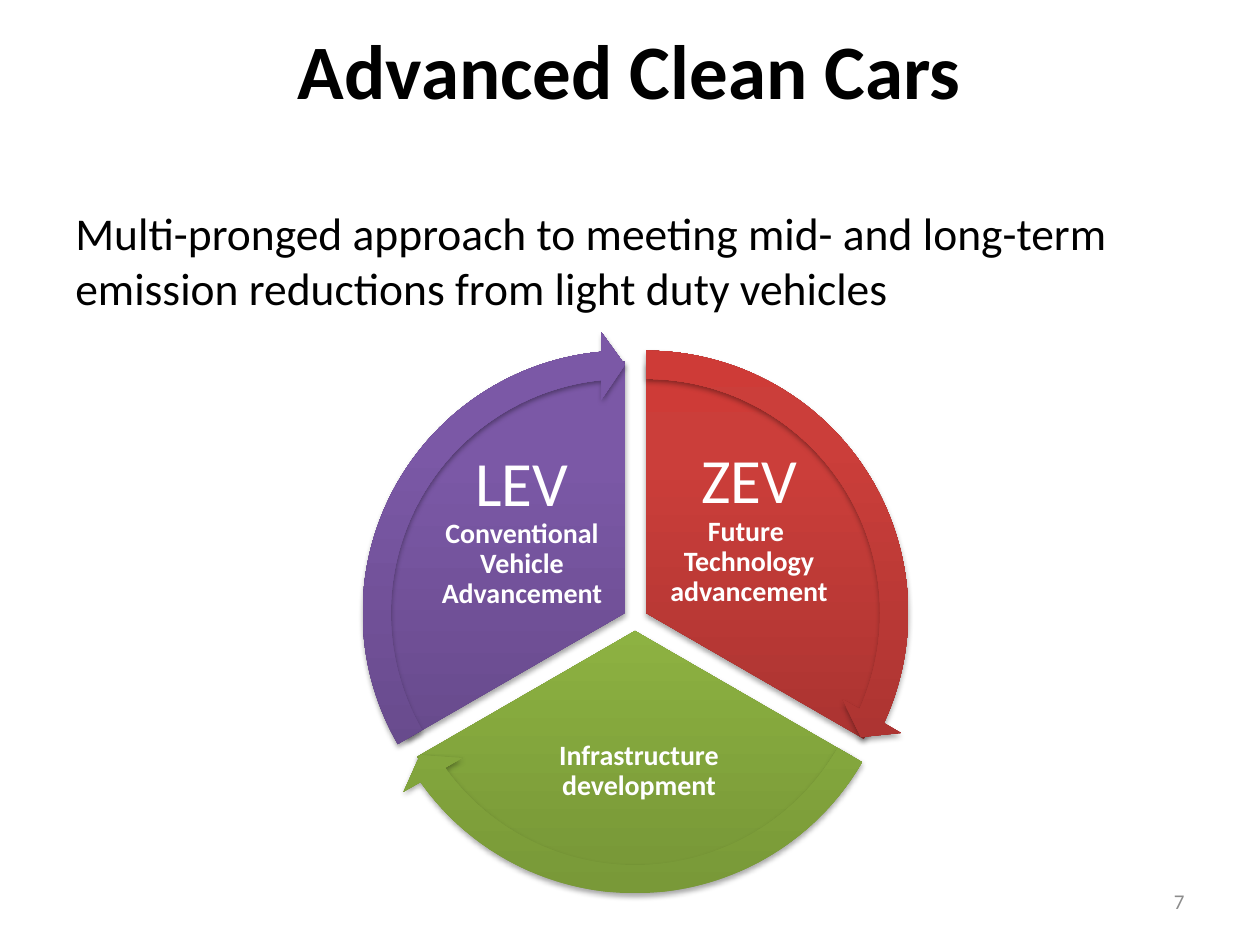
from copy import deepcopy

from lxml.etree import SubElement
from pptx import Presentation
from pptx.dml.color import RGBColor
from pptx.enum.shapes import MSO_SHAPE as Shape
from pptx.enum.text import MSO_ANCHOR as Anchor, PP_ALIGN as Align
from pptx.oxml.ns import qn
from pptx.util import Emu, Pt

PX = 914400 / 126
FONT = "Calibri"
BLACK = RGBColor(0x00, 0x00, 0x00)
WHITE = RGBColor(0xFF, 0xFF, 0xFF)
GRAY = RGBColor(0x8C, 0x8C, 0x8C)
RED = [RGBColor(0x9C, 0x2F, 0x2D), RGBColor(0xCB, 0x3E, 0x3A), RGBColor(0xCE, 0x3B, 0x37)]
GREEN = [RGBColor(0x77, 0x97, 0x37), RGBColor(0x9B, 0xC3, 0x48), RGBColor(0x9D, 0xC7, 0x46)]
PURPLE = [RGBColor(0x5F, 0x44, 0x80), RGBColor(0x7B, 0x58, 0xA6), RGBColor(0x7C, 0x57, 0xA8)]

PIE_SIZE = 503
ARROW_SIZE = 564
HEAD_ANGLE = 3.28
# Sector: colours, centre offset from the wheel centre, start and end angle
# (in units of 100000/60000 degree)
SECTORS = [
    (RED, 11, -9, 162, 18),
    (GREEN, 0, 9, 18, 90),
    (PURPLE, -10, -9, 90, 162),
]
# Label: box within the wheel, side inset, bottom inset, lines (text, size, bold, spacing)
LABELS = [
    ((316, 139, 180, 150), 6, 37,
     [("ZEV", 36, False, 0.9), ("Future ", 16, True, 0.9),
      ("Technology advancement", 16, True, 0.9)]),
    ((161, 376, 270, 131), 3, 3, [("Infrastructure development", 16, True, 0.9)]),
    ((89, 139, 180, 150), 6, 41,
     [("LEV", 36, False, 1.0), ("Conventional", 16, True, 0.9),
      ("Vehicle", 16, True, 0.9), ("Advancement", 16, True, 0.9)]),
]


def px(length):
    return Emu(round(length * PX))


def add_text(page, box, lines, color, align, anchor):
    frame = page.shapes.add_textbox(*map(px, box)).text_frame
    frame.word_wrap = True
    frame.vertical_anchor = anchor
    for index, (text, size, bold, spacing) in enumerate(lines):
        para = frame.add_paragraph() if index else frame.paragraphs[0]
        para.alignment = align
        para.line_spacing = spacing
        span = para.add_run()
        span.text = text
        span.font.name = FONT
        span.font.size = Pt(size)
        span.font.bold = bold
        span.font.color.rgb = color
    return frame


def paint(shape, colors):
    """Gradient rising from the bottom, no outline, soft shadow below."""
    shape.line.fill.background()
    shape.fill.gradient()
    shape.fill.gradient_angle = 90
    properties = shape._element.spPr
    stop_list = properties.find(".//" + qn("a:gsLst"))
    stop_list.append(deepcopy(stop_list[-1]))
    for stop, position, color in zip(shape.fill.gradient_stops, (0, 0.8, 1), colors):
        stop.position = position
        stop.color.rgb = color
    shape.shadow.inherit = False
    shadow = SubElement(properties.find(qn("a:effectLst")), qn("a:outerShdw"),
                        blurRad=str(Pt(3.1)), dist=str(Pt(1.8)), dir="5400000",
                        rotWithShape="0")
    shade = SubElement(shadow, qn("a:srgbClr"), val=str(BLACK))
    SubElement(shade, qn("a:alpha"), val="35000")


def add_round(page, kind, center_x, center_y, size, adjustments, colors):
    shape = page.shapes.add_shape(kind, px(center_x - size / 2), px(center_y - size / 2),
                                  px(size), px(size))
    for index, value in enumerate(adjustments):
        shape.adjustments[index] = value
    paint(shape, colors)


def add_heading(page, box):
    add_text(page, box, [("Advanced Clean Cars", 44, True, 1.0)], BLACK,
             Align.CENTER, Anchor.MIDDLE)


def add_statement(page, box):
    text = ("Multi-pronged approach to meeting mid- and long-term "
            "emission reductions from light duty vehicles")
    add_text(page, box, [(text, 26, False, 1.0)], BLACK, Align.LEFT, Anchor.TOP)


def add_page_number(page, box):
    add_text(page, box, [("7", 12, False, 1.0)], GRAY, Align.RIGHT, Anchor.MIDDLE)


def add_wheel(page, box):
    left, top, width, height = box
    middle_x, middle_y = left + width / 2, top + height / 2
    # Sectors, each with its label
    for sector, label in zip(SECTORS, LABELS):
        colors, shift_x, shift_y, start, end = sector
        add_round(page, Shape.PIE, middle_x + shift_x, middle_y + shift_y,
                  PIE_SIZE, (start, end), colors)
        (label_x, label_y, label_w, label_h), inset, bottom, lines = label
        frame = add_text(page, (left + label_x, top + label_y, label_w, label_h),
                         lines, WHITE, Align.CENTER, Anchor.MIDDLE)
        frame.margin_left = frame.margin_right = frame.margin_top = px(inset)
        frame.margin_bottom = px(bottom)
    # Arrows along the rim
    for colors, shift_x, shift_y, start, end in SECTORS:
        add_round(page, Shape.CIRCULAR_ARROW, middle_x + shift_x, middle_y + shift_y,
                  ARROW_SIZE, (0.05, HEAD_ANGLE, end - HEAD_ANGLE, start, 0.06), colors)


def main():
    deck = Presentation()
    deck.slide_width, deck.slide_height = px(1260), px(945)
    page = deck.slides.add_slide(deck.slide_layouts[6])
    add_heading(page, (63, 0, 1134, 137))
    add_statement(page, (63, 199, 1134, 129))
    add_page_number(page, (903, 876, 294, 50))
    add_wheel(page, (343, 330, 584, 584))
    deck.save("out.pptx")


if __name__ == "__main__":
    main()
